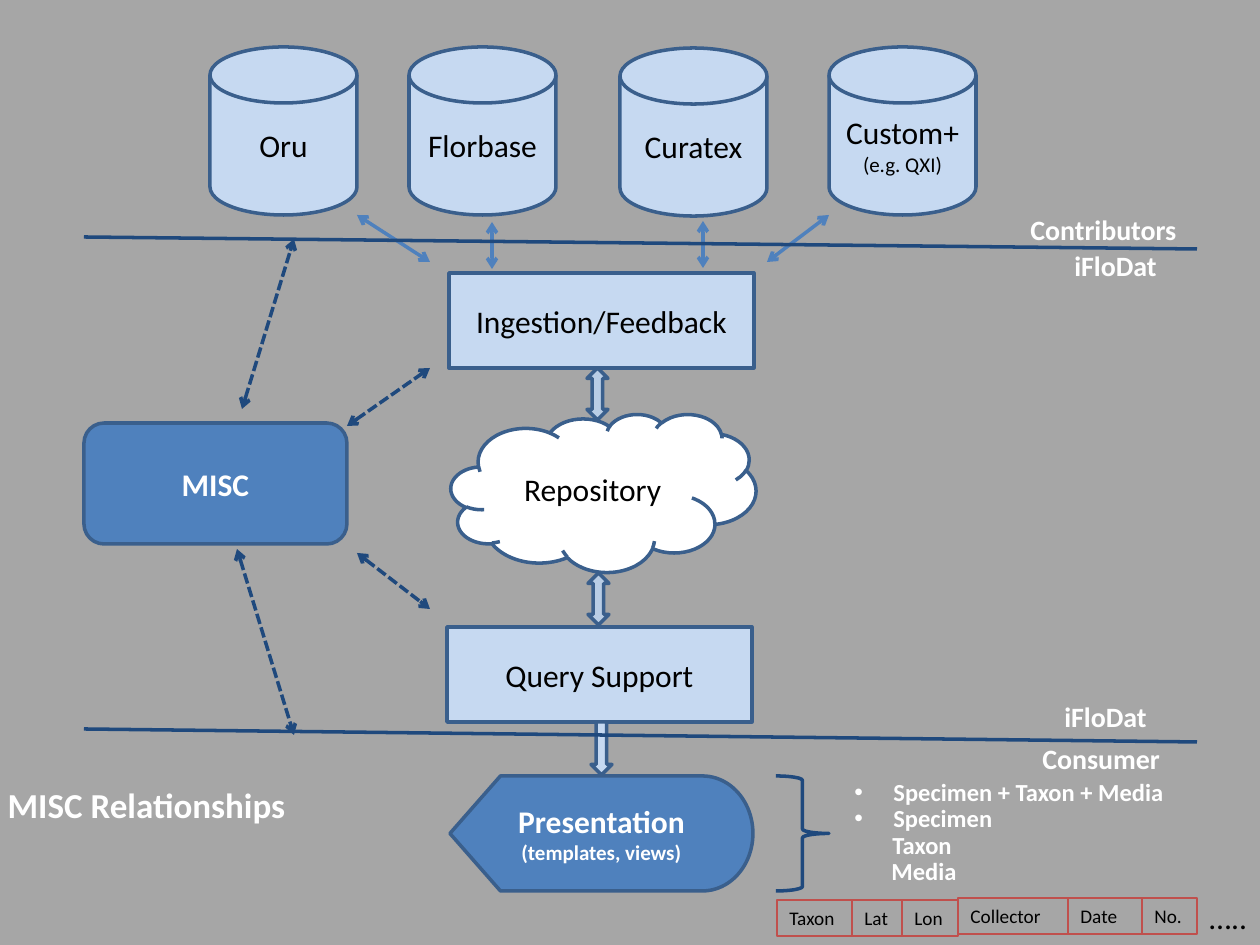
"""Build the slide on how MISC relates to contributors, repository and consumers."""
from lxml import etree
from pptx import Presentation
from pptx.dml.color import RGBColor
from pptx.enum.dml import MSO_LINE
from pptx.enum.shapes import MSO_CONNECTOR, MSO_SHAPE
from pptx.enum.text import MSO_ANCHOR, PP_ALIGN
from pptx.oxml.ns import qn
from pptx.util import Pt

PX = 914400 / 126
DISK = MSO_SHAPE.FLOWCHART_MAGNETIC_DISK
RECT = MSO_SHAPE.RECTANGLE
CLOUD = MSO_SHAPE.CLOUD
ROUND = MSO_SHAPE.FLOWCHART_ALTERNATE_PROCESS
SCREEN = MSO_SHAPE.FLOWCHART_DISPLAY
DOWN = MSO_SHAPE.DOWN_ARROW
BOTH = MSO_SHAPE.UP_DOWN_ARROW
BRACE = MSO_SHAPE.RIGHT_BRACE
STRAIGHT = MSO_CONNECTOR.STRAIGHT
DASH = MSO_LINE.SQUARE_DOT
LEFT, CENTER = PP_ALIGN.LEFT, PP_ALIGN.CENTER
TOP, MIDDLE = MSO_ANCHOR.TOP, MSO_ANCHOR.MIDDLE

HUES = {
    "back": "A6A6A6", "pale": "C6D9F1", "mist": "B9CDE5", "blue": "4F81BD",
    "edge": "3A5F8C", "navy": "1F497D", "red": "C0504D",
    "white": "FFFFFF", "black": "000000",
}

TITLE = ("MISC Relationships", (-5, 777, 383, 55))

NODES = [
    (DISK, (210, 47, 147, 168), "pale", ["Oru"]),
    (DISK, (409, 47, 147, 168), "pale", ["Florbase"]),
    (DISK, (620, 48, 147, 168), "pale", ["Curatex"]),
    (DISK, (829, 47, 147, 168), "pale", ["Custom+", "(e.g. QXI)"]),
    (RECT, (449, 273, 305, 95), "pale", ["Ingestion/Feedback"]),
    (RECT, (447, 627, 305, 95), "pale", ["Query Support"]),
    (CLOUD, (451, 414, 305, 158), "white", ["Repository"]),
    (ROUND, (84, 423, 263, 121), "blue", ["MISC"]),
    (SCREEN, (450, 776, 303, 115), "blue", ["Presentation", "(templates, views)"]),
    (DOWN, (591, 722, 21, 53), "pale", []),
    (BOTH, (587, 368, 21, 52), "mist", []),
    (BOTH, (588, 573, 21, 52), "mist", []),
]

FEEDS = [(829, 215, 767, 262), (703, 221, 703, 268),
         (492, 222, 492, 269), (357, 215, 430, 262)]
LINKS = [(347, 426, 430, 368), (357, 553, 430, 609),
         (242, 409, 294, 239), (237, 549, 294, 735)]
BOUNDS = [(84, 237, 1197, 249), (84, 729, 1197, 742)]

LABELS = [
    ("Contributors", (1018, 206, 221, 47), 16),
    ("iFloDat", (1062, 242, 176, 47), 16),
    ("iFloDat", (1052, 693, 176, 47), 16),
    ("Consumer", (1030, 735, 151, 47), 16),
    ("Taxon", (880, 824, 277, 42), 14),
    ("Media", (879, 850, 277, 42), 14),
]
ITEMS = [
    ("Specimen + Taxon + Media", (842, 771, 398, 42), 14),
    ("Specimen", (842, 797, 277, 42), 14),
]

FIELDS = ["Taxon", "Lat", "Lon", "Collector", "Date", "No."]
EDGES = [777, 852, 902, 958, 1068, 1142, 1197]
TOPS = [900] * 3 + [898] * 3
MORE = ("…..", (1197, 892, 63, 50), 18)


def emu(box):
    return [round(n * PX) for n in box]


def hue(name):
    return RGBColor.from_string(HUES[name])


def write(shape, lines, sizes, tone, bold=False, align=LEFT, anchor=TOP):
    frame = shape.text_frame
    frame.word_wrap = True
    frame.vertical_anchor = anchor
    frame.text = "\n".join(lines)
    for para, size in zip(frame.paragraphs, sizes):
        para.alignment = align
        font = para.font
        font.name, font.size, font.bold = "Calibri", Pt(size), bold
        font.color.rgb = hue(tone)


def draw(slide, kind, box, fill, edge, width=2):
    shape = slide.shapes.add_shape(kind, *emu(box))
    shape.shadow.inherit = False
    if fill:
        shape.fill.solid()
        shape.fill.fore_color.rgb = hue(fill)
    else:
        shape.fill.background()
    shape.line.color.rgb = hue(edge)
    shape.line.width = Pt(width)
    return shape


def label(slide, text, box, size, tone="white", bold=True):
    shape = slide.shapes.add_textbox(*emu(box))
    write(shape, [text], [size], tone, bold)
    return shape


def bullet(shape):
    props = shape.text_frame.paragraphs[0]._p.get_or_add_pPr()
    indent = round(39 * PX)
    props.set("marL", str(indent))
    props.set("indent", str(-indent))
    etree.SubElement(props, qn("a:buFont")).set("typeface", "Arial")
    etree.SubElement(props, qn("a:buChar")).set("char", "•")


def join(slide, ends, tone, heads=True, dash=None):
    link = slide.shapes.add_connector(STRAIGHT, *emu(ends))
    link.line.color.rgb = hue(tone)
    link.line.width = Pt(2)
    if dash:
        link.line.dash_style = dash
    if heads:
        line = link.line._get_or_add_ln()
        for tag in ("a:headEnd", "a:tailEnd"):
            etree.SubElement(line, qn(tag)).set("type", "arrow")
    etree.SubElement(link._element.spPr, qn("a:effectLst"))


def main():
    deck = Presentation()
    deck.slide_width, deck.slide_height = emu((1260, 945))
    slide = deck.slides.add_slide(deck.slide_layouts[5])
    slide.background.fill.solid()
    slide.background.fill.fore_color.rgb = hue("back")

    title = slide.shapes.title
    text, box = TITLE
    title.left, title.top, title.width, title.height = emu(box)
    write(title, [text], [20], "white", True)

    for kind, box, fill, lines in NODES:
        node = draw(slide, kind, box, fill, "edge")
        dark = fill == "blue"
        if lines:
            write(node, lines, (18, 12), "white" if dark else "black",
                  dark, CENTER, MIDDLE)
    draw(slide, BRACE, (776, 776, 53, 115), None, "navy")

    for ends in FEEDS:
        join(slide, ends, "blue")
    for ends in LINKS:
        join(slide, ends, "navy", dash=DASH)
    for ends in BOUNDS:
        join(slide, ends, "navy", heads=False)

    for entry in LABELS:
        label(slide, *entry)
    for entry in ITEMS:
        bullet(label(slide, *entry))

    for name, left, right, top in zip(FIELDS, EDGES, EDGES[1:], TOPS):
        cell = draw(slide, RECT, (left, top, right - left, 36), None, "red", 0.75)
        write(cell, [name], [11], "black")
    label(slide, *MORE, tone="black", bold=False)

    deck.save("out.pptx")


if __name__ == "__main__":
    main()
